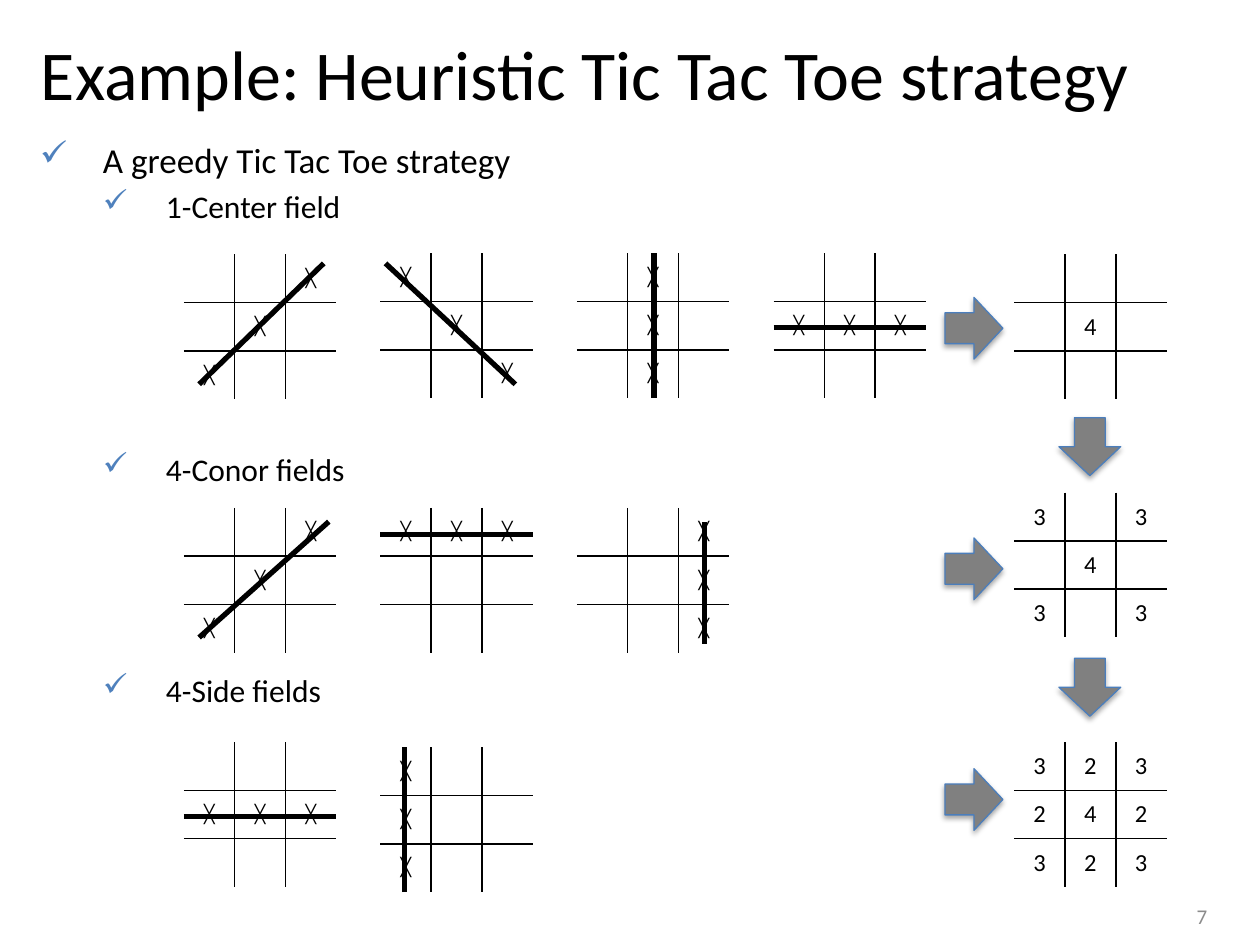
"""Build a slide on a heuristic Tic Tac Toe strategy."""
from lxml.etree import SubElement
from pptx import Presentation
from pptx.dml.color import RGBColor
from pptx.enum.shapes import MSO_CONNECTOR as Connector, MSO_SHAPE as Shape
from pptx.enum.text import MSO_ANCHOR as Anchor, MSO_AUTO_SIZE as AutoSize, PP_ALIGN as Align
from pptx.oxml.ns import qn
from pptx.util import Pt

COLORS = {"ink": "000000", "check": "4F81BD", "page": "8C8C8C",
          "arrow": "808080", "edge": "4B7EBC"}
FIRST_X, STEP_X, RESULT_X = 105.1, 112.3, 579.6
COLUMN, ROW = 29, 27.6

BULLETS = [("A greedy Tic Tac Toe strategy", 0, 20, 0),
           ("1-Center field", 1, 18, 3.6),
           ("4-Conor fields", 1, 18, 129),
           ("4-Side fields", 1, 18, 104.3)]

WINS = [(0, 145.4, "..╳/.╳./╳..", (113.8, 219.6, 185, 150.5)),
        (1, 144.7, "╳../.╳./..╳", (294.5, 219.6, 220.3, 150.5)),
        (2, 144.7, ".╳./.╳./.╳.", (373.7, 227.5, 373.7, 144.7)),
        (3, 144.7, ".../╳╳╳/...", (442.1, 187.2, 529.2, 187.2)),
        (0, 290.2, "..╳/.╳./╳..", (113.8, 364.3, 187.9, 298.1)),
        (1, 290.2, "╳╳╳/.../...", (217.4, 305.3, 304.6, 305.3)),
        (2, 290.2, "..╳/..╳/..╳", (402.5, 367.9, 402.5, 298.1)),
        (0, 424.1, ".../╳╳╳/...", (105.1, 466.6, 192.2, 466.6)),
        (1, 427, "╳../╳../╳..", (231.1, 509.8, 231.1, 427))]

RESULTS = [(145.4, ".../.4./..."), (281.5, "3.3/.4./3.3"), (424.1, "323/242/323")]
ARROWS = [(540, 169.9, 0), (540, 307.4, 0), (540, 439.2, 0),
          (606.2, 237.6, 90), (606.2, 375.1, 90)]


def rgb(name):
    """Return the named colour."""
    return RGBColor.from_string(COLORS[name])


def write(para, text, size=18, color="ink", font="Calibri", align=None):
    """Put formatted text into a paragraph."""
    para.alignment = align
    span = para.add_run()
    span.text = text
    span.font.size, span.font.name = Pt(size), font
    span.font.color.rgb = rgb(color)


def add_check(para, level):
    """Give a paragraph a hanging check mark."""
    props = para._p.get_or_add_pPr()
    props.set("marL", str(Pt(36 * (level + 1))))
    props.set("indent", str(Pt(-36)))
    tint = SubElement(props, qn("a:buClr"))
    SubElement(tint, qn("a:srgbClr"), val=COLORS["check"])
    SubElement(props, qn("a:buChar"), char="✓")


def add_border(cell, side):
    """Draw a thin line on one side of a cell."""
    line = SubElement(cell._tc.get_or_add_tcPr(), qn(f"a:ln{side}"), w=str(Pt(1)))
    fill = SubElement(line, qn("a:solidFill"))
    SubElement(fill, qn("a:srgbClr"), val=COLORS["ink"])


class Painter:
    """Hold the style and the slide being drawn."""

    no_style = "{2D5ABB26-0587-4C30-8999-92F81FD0307C}"

    def __init__(self, slide):
        """Keep the current slide."""
        self.slide = slide
        self.shapes = slide.shapes

    def title(self, text, left, top, width, height):
        """Place and fill the title placeholder."""
        box = self.shapes.title
        box.left, box.top, box.width, box.height = map(Pt, (left, top, width, height))
        frame = box.text_frame
        frame.auto_size, frame.word_wrap = AutoSize.NONE, False
        frame.vertical_anchor = Anchor.MIDDLE
        write(frame.paragraphs[0], text, size=40, align=Align.CENTER)

    def text_box(self, left, top, width, height, anchor=Anchor.TOP):
        """Add a wrapping text box and return its frame."""
        box = self.shapes.add_textbox(*map(Pt, (left, top, width, height)))
        frame = box.text_frame
        frame.word_wrap, frame.vertical_anchor = True, anchor
        return frame

    def bullets(self, items, *place):
        """Add the checked list."""
        frame = self.text_box(*place)
        for index, (text, level, size, before) in enumerate(items):
            para = frame.add_paragraph() if index else frame.paragraphs[0]
            para.level = level
            para.space_before = Pt(before)
            add_check(para, level)
            write(para, text, size=size)

    def board(self, left, top, marks, size):
        """Add a three by three board; a dot is an empty field."""
        place = map(Pt, (left, top, 3 * COLUMN, 3 * ROW))
        table = self.shapes.add_table(3, 3, *place).table
        table.first_row = table.horz_banding = False
        table._tbl.tblPr.find(qn("a:tableStyleId")).text = self.no_style
        for row, line in enumerate(marks.split("/")):
            for column, mark in enumerate(line):
                cell = table.cell(row, column)
                inner = {"L": column > 0, "R": column < 2, "T": row > 0, "B": row < 2}
                for side in filter(inner.get, inner):
                    add_border(cell, side)
                cell.fill.background()
                cell.margin_left = cell.margin_right = Pt(4.3)
                cell.margin_top = cell.margin_bottom = Pt(2.2)
                cell.vertical_anchor = Anchor.MIDDLE
                if mark != ".":
                    write(cell.text_frame.paragraphs[0], mark, size=size, align=Align.CENTER)

    def stroke(self, *ends):
        """Add a thick winning line."""
        line = self.shapes.add_connector(Connector.STRAIGHT, *map(Pt, ends))
        line.line.color.rgb = rgb("ink")
        line.line.width = Pt(3)
        SubElement(line.element.spPr, qn("a:effectLst"))

    def arrow(self, left, top, turn):
        """Add a block arrow with a soft shadow."""
        shape = self.shapes.add_shape(Shape.RIGHT_ARROW, *map(Pt, (left, top, 33.1, 35.3)))
        shape.rotation = turn
        shape.fill.solid()
        shape.fill.fore_color.rgb = rgb("arrow")
        shape.line.color.rgb = rgb("edge")
        shape.line.width = Pt(0.75)
        shape.shadow.inherit = False
        effects = shape.element.spPr.find(qn("a:effectLst"))
        shadow = SubElement(effects, qn("a:outerShdw"), blurRad=str(Pt(3.1)),
                            dist=str(Pt(1.8)), dir="5400000", rotWithShape="0")
        tint = SubElement(shadow, qn("a:srgbClr"), val=COLORS["ink"])
        SubElement(tint, qn("a:alpha"), val="35000")


def main():
    """Build and save the deck."""
    deck = Presentation()
    deck.slide_width, deck.slide_height = Pt(720), Pt(540)
    painter = Painter(deck.slides.add_slide(deck.slide_layouts[5]))
    painter.title("Example: Heuristic Tic Tac Toe strategy", 15.8, 19.4, 636.5, 43.9)
    painter.bullets(BULLETS, 15.8, 75.6, 681.1, 414)
    page = painter.text_box(529.2, 509, 167.8, 28.8, anchor=Anchor.MIDDLE)
    write(page.paragraphs[0], "7", size=12, color="page", align=Align.RIGHT)
    for column, top, marks, ends in WINS:
        painter.board(FIRST_X + column * STEP_X, top, marks, 10)
        painter.stroke(*ends)
    for top, marks in RESULTS:
        painter.board(RESULT_X, top, marks, 14)
    for place in ARROWS:
        painter.arrow(*place)
    deck.save("out.pptx")


if __name__ == "__main__":
    main()
